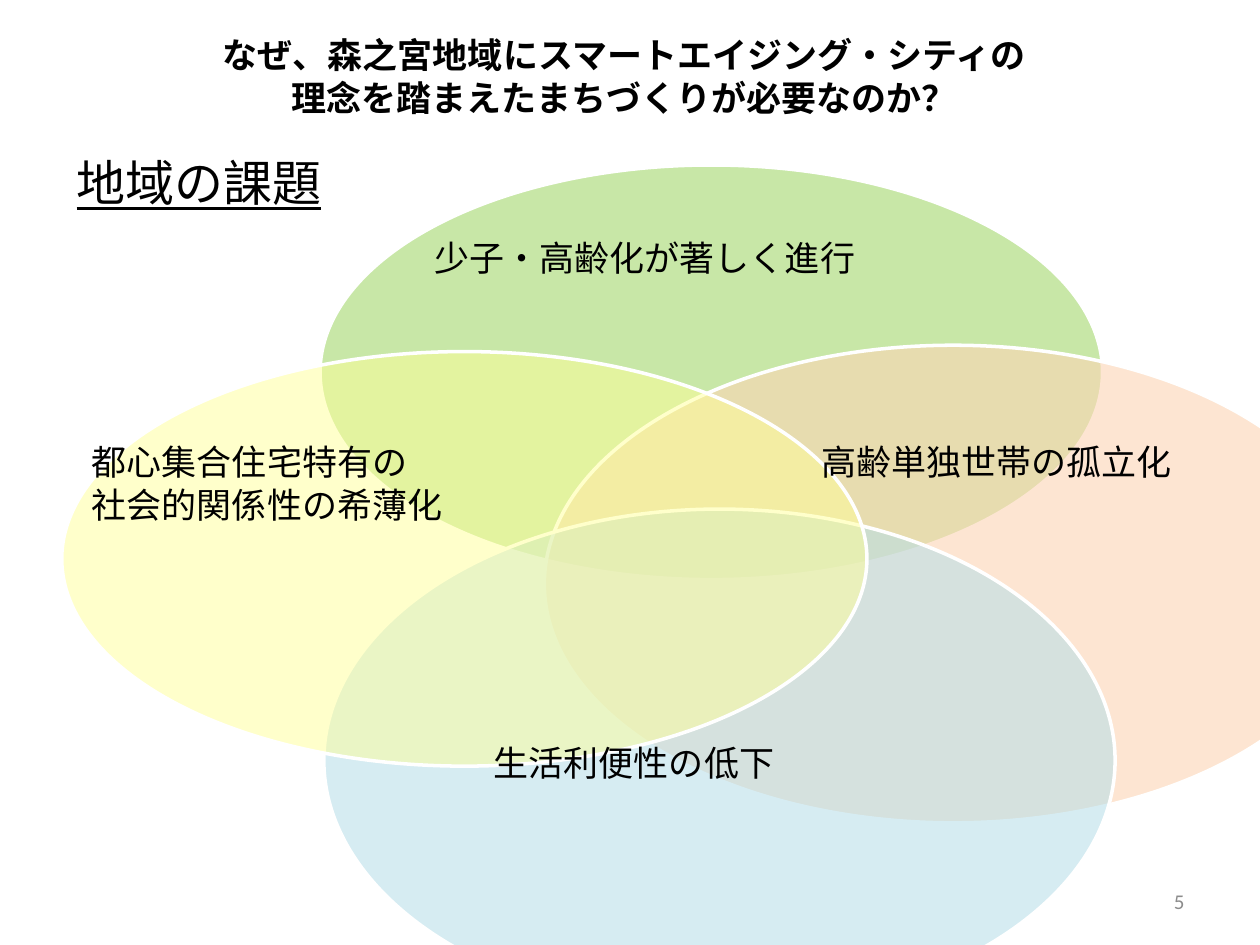
from typing import NamedTuple

from lxml.etree import SubElement
from pptx import Presentation
from pptx.dml.color import RGBColor
from pptx.enum.shapes import MSO_SHAPE
from pptx.enum.text import MSO_ANCHOR, MSO_AUTO_SIZE, PP_ALIGN
from pptx.oxml.ns import qn
from pptx.slide import Slide
from pptx.util import Inches, Pt

BLACK = RGBColor(0x00, 0x00, 0x00)
GRAY = RGBColor(0x8C, 0x8C, 0x8C)
WHITE = RGBColor(0xFF, 0xFF, 0xFF)
GREEN = RGBColor(0x92, 0xD0, 0x50)
ORANGE = RGBColor(0xFC, 0xD5, 0xB5)
BLUE = RGBColor(0xB7, 0xDE, 0xE8)
YELLOW = RGBColor(0xFF, 0xFF, 0x99)

JAPANESE_FONT = "Noto Sans CJK JP"
LINE_HEIGHT = 1.22


class Box(NamedTuple):
    left: float
    top: float
    width: float
    height: float


class Issue(NamedTuple):
    box: Box
    color: RGBColor
    opacity: int  # percent


class Label(NamedTuple):
    box: Box
    lines: list[str]
    size: int = 20
    align: PP_ALIGN = PP_ALIGN.LEFT
    bold: bool = False
    underline: bool = False
    font: str = JAPANESE_FONT
    color: RGBColor = BLACK
    anchor: MSO_ANCHOR = MSO_ANCHOR.TOP
    grow: bool = True


ISSUES = [
    Issue(Box(2.54, 1.31, 6.21, 3.29), GREEN, 50),
    Issue(Box(4.32, 2.74, 6.49, 3.79), ORANGE, 60),
    Issue(Box(2.57, 4.04, 6.28, 3.99), BLUE, 56),
    Issue(Box(0.49, 2.79, 6.39, 3.29), YELLOW, 50),
]

HEADINGS = [
    Label(Box(0.98, 0.21, 7.95, 0.77),
          ["なぜ、森之宮地域にスマートエイジング・シティの",
           "理念を踏まえたまちづくりが必要なのか？"],
          align=PP_ALIGN.CENTER, bold=True),
    Label(Box(0.51, 1.15, 2.76, 0.57), ["地域の課題"], size=28, underline=True),
]

ISSUE_LABELS = [
    Label(Box(0.63, 3.44, 3.58, 0.77), ["都心集合住宅特有の", "社会的関係性の希薄化"]),
    Label(Box(3.35, 1.82, 3.7, 0.44), ["少子・高齢化が著しく進行"]),
    Label(Box(6.42, 3.44, 3.07, 0.44), ["高齢単独世帯の孤立化"]),
    Label(Box(3.82, 5.83, 2.52, 0.44), ["生活利便性の低下"]),
]

PAGE_NUMBER = Label(Box(7.17, 6.95, 2.33, 0.4), ["5"], size=12, align=PP_ALIGN.RIGHT,
                    font="Calibri", color=GRAY, anchor=MSO_ANCHOR.MIDDLE, grow=False)


def draw_issue(slide: Slide, issue: Issue) -> None:
    ellipse = slide.shapes.add_shape(MSO_SHAPE.OVAL, *map(Inches, issue.box))
    ellipse.shadow.inherit = False
    ellipse.fill.solid()
    ellipse.fill.fore_color.rgb = issue.color
    color = ellipse.fill._xPr.find(f".//{qn('a:srgbClr')}")
    SubElement(color, qn("a:alpha"), val=str(issue.opacity * 1000))
    ellipse.line.color.rgb = WHITE
    ellipse.line.width = Pt(2)


def draw_label(slide: Slide, label: Label) -> None:
    frame = slide.shapes.add_textbox(*map(Inches, label.box)).text_frame
    frame.word_wrap = True
    frame.auto_size = MSO_AUTO_SIZE.SHAPE_TO_FIT_TEXT if label.grow else MSO_AUTO_SIZE.NONE
    frame.vertical_anchor = label.anchor
    frame.text = "\n".join(label.lines)
    for paragraph in frame.paragraphs:
        paragraph.alignment = label.align
        paragraph.line_spacing = Pt(label.size * LINE_HEIGHT)
        font = paragraph.font
        font.name = label.font
        font.size = Pt(label.size)
        font.bold = label.bold
        font.underline = label.underline
        font.color.rgb = label.color
        # Japanese glyphs take the East Asian typeface
        SubElement(font._element, qn("a:ea"), typeface=label.font)


def main() -> None:
    presentation = Presentation()
    presentation.slide_width = Inches(10)
    presentation.slide_height = Inches(7.5)
    slide = presentation.slides.add_slide(presentation.slide_layouts[6])
    for heading in HEADINGS:
        draw_label(slide, heading)
    for issue in ISSUES:
        draw_issue(slide, issue)
    for label in [*ISSUE_LABELS, PAGE_NUMBER]:
        draw_label(slide, label)
    presentation.save("out.pptx")


if __name__ == "__main__":
    main()
